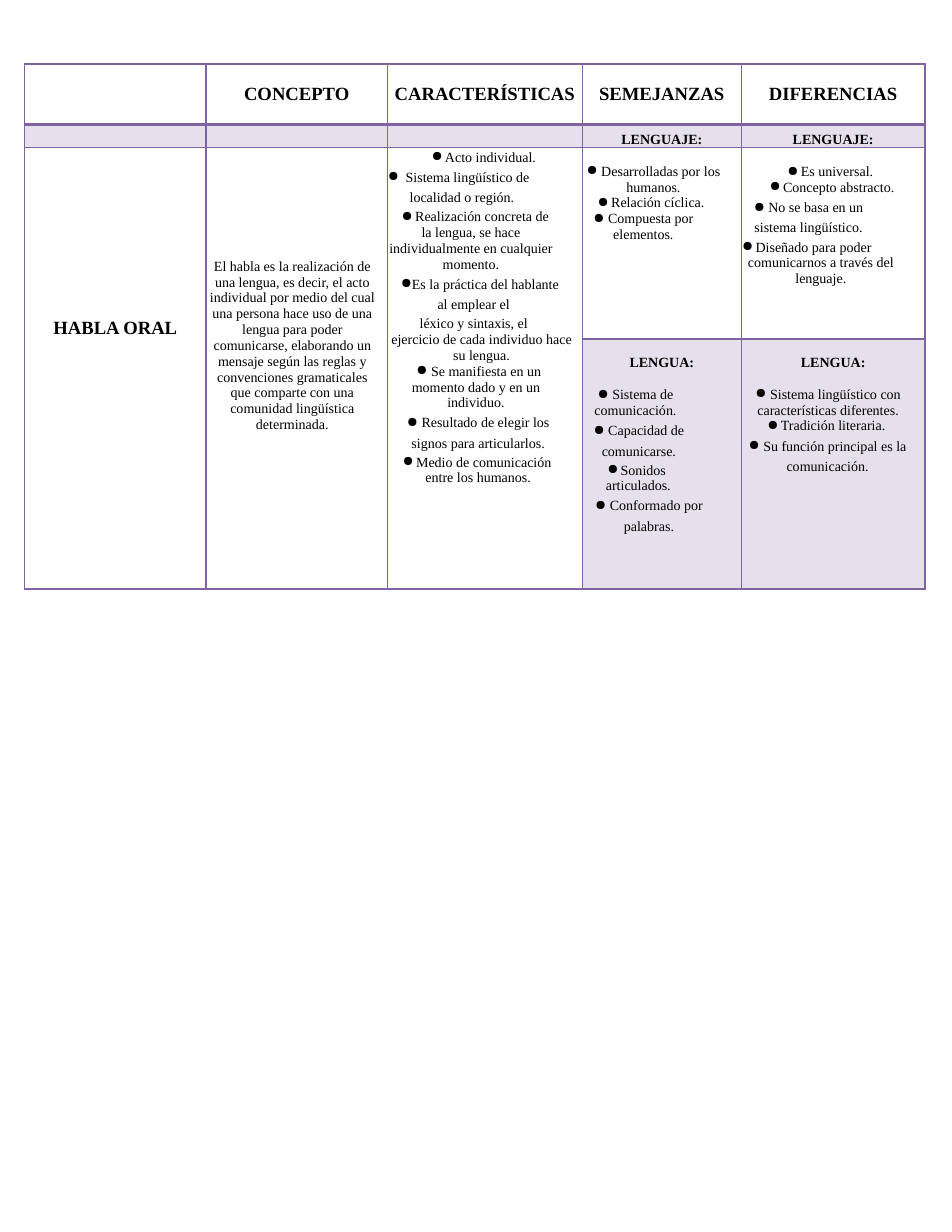
from lxml.etree import SubElement
from pptx import Presentation
from pptx.dml.color import RGBColor
from pptx.enum.text import PP_ALIGN as Align
from pptx.oxml.ns import qn
from pptx.util import Inches, Pt

PURPLE = "8064A2"
BLACK = "000000"


def rgb(hex_color):
    return RGBColor.from_string(hex_color)


def write(cell, entries, size=9, bold=False, top=0):
    """Fill a cell; an entry is (text, right margin, line spacing, indent, tab).

    An entry with a tab gets a bullet; a line spacing above 3 is in points.
    """
    cell.margin_top = Inches(top)
    frame = cell.text_frame
    for number, (text, right, line, indent, tab) in enumerate(entries):
        paragraph = frame.add_paragraph() if number else frame.paragraphs[0]
        props = paragraph._p.get_or_add_pPr()
        props.set("marL", "0")
        props.set("marR", str(Inches(right)))
        props.set("indent", str(Inches(indent)))
        if tab:
            SubElement(props, qn("a:buChar")).set("char", "●")
            stops = SubElement(props, qn("a:tabLst"))
            stop = SubElement(stops, qn("a:tab"))
            stop.set("pos", str(Inches(tab)))
            stop.set("algn", "l")
        paragraph.alignment = Align.CENTER
        paragraph.line_spacing = Pt(line) if line > 3 else line
        run = paragraph.add_run()
        run.text = text
        run.font.name = "Times New Roman"
        run.font.size = Pt(size)
        run.font.bold = bold or text == "LENGUA:"
        run.font.color.rgb = rgb(BLACK)


prs = Presentation()
prs.slide_width, prs.slide_height = Inches(8.5), Inches(11)
slide = prs.slides.add_slide(prs.slide_layouts[6])

# Table grid
column_widths = [1.62, 1.62, 1.74, 1.42, 1.64]
row_heights = [0.54, 0.2, 1.71, 2.23]
table = slide.shapes.add_table(4, 5, Inches(0.22), Inches(0.57), Inches(8.04), Inches(4.68)).table
for column, width in zip(table.columns, column_widths):
    column.width = Inches(width)
for row, height in zip(table.rows, row_heights):
    row.height = Inches(height)

# Borders, margins and fills
shaded = [(1, column) for column in range(5)] + [(3, 3), (3, 4)]
for r in range(4):
    for c in range(5):
        cell = table.cell(r, c)
        cell.margin_left = cell.margin_right = cell.margin_top = cell.margin_bottom = 0
        cell_props = cell._tc.get_or_add_tcPr()
        for side in ("L", "R", "T", "B"):
            heavy = (r, side) in [(0, "B"), (1, "T")]
            border = SubElement(cell_props, qn(f"a:ln{side}"))
            border.set("w", str(Pt(2 if heavy else 1)))
            border_fill = SubElement(border, qn("a:solidFill"))
            SubElement(border_fill, qn("a:srgbClr")).set("val", PURPLE)
        if (r, c) in shaded:
            cell.fill.solid()
            cell.fill.fore_color.rgb = rgb(PURPLE)
            tint = cell_props.find(qn("a:solidFill")).find(qn("a:srgbClr"))
            SubElement(tint, qn("a:alpha")).set("val", "20000")
        else:
            cell.fill.background()

# Cells that span the two lower rows
for c in range(3):
    table.cell(2, c).merge(table.cell(3, c))

# Small type in the empty cells keeps their rows low
for r, c in [(0, 0), (1, 0), (1, 1), (1, 2), (3, 0), (3, 1), (3, 2)]:
    end_props = SubElement(table.cell(r, c).text_frame.paragraphs[0]._p, qn("a:endParaRPr"))
    end_props.set("sz", "900")

# Headings
headings = ["CONCEPTO", "CARACTERÍSTICAS", "SEMEJANZAS", "DIFERENCIAS"]
for c, heading in enumerate(headings, 1):
    write(table.cell(0, c), [(heading, 0, 1, 0, None)], size=12, bold=True, top=0.18)
for c in (3, 4):
    write(table.cell(1, c), [("LENGUAJE:", 0, 1.5, 0, None)], bold=True)

# Topic and concept
write(table.cell(2, 0), [("HABLA ORAL", 0, 1, 0, None)], size=12, bold=True, top=1.52)
concept = (
    "El habla es la realización de una lengua, es decir, el acto individual por medio del cual "
    "una persona hace uso de una lengua para poder comunicarse, elaborando un mensaje según las "
    "reglas y convenciones gramaticales que comparte con una comunidad lingüística determinada."
)
write(table.cell(2, 1), [(concept, 0.08, 1.02, 0, None)], top=0.99)

# Characteristics
write(table.cell(2, 2), [
    ("Acto individual.", 0, 11.2, -0.12, 0.47),
    ("Sistema lingüístico de localidad o región.", 0.41, 13, -0.16, 0.29),
    ("Realización concreta de", 0.15, 12.3, -0.12, 0.23),
    ("la lengua, se hace individualmente en cualquier momento.", 0.25, 1.02, 0, None),
    ("Es la práctica del hablante al emplear el", 0.2, 13, 0.11, 0.44),
    ("léxico y sintaxis, el", 0.2, 12.3, 0, None),
    ("ejercicio de cada individuo hace su lengua.", 0.06, 1.02, 0, None),
    (" Se manifiesta en un momento dado y en un", 0.16, 1.02, 0.05, 0.35),
    ("individuo.", 0.16, 1, 0, None),
    (" Resultado de elegir los signos para articularlos.", 0.12, 13, -0.03, 0.26),
    ("Medio de comunicación", 0.12, 12.3, -0.12, 0.22),
    ("entre los humanos.", 0.12, 1, 0, None),
])

# Similarities and differences: language
write(table.cell(2, 3), [
    (" Desarrolladas por los humanos.", 0.15, 1.03, 0, 0.2),
    ("Relación cíclica.", 0.17, 1, -0.12, 0.2),
    (" Compuesta por elementos.", 0.33, 1.02, 0, 0.16),
], top=0.14)
write(table.cell(2, 4), [
    ("Es universal.", 0.03, 1, -0.12, 0.2),
    ("Concepto abstracto.", 0, 1, -0.12, 0.2),
    (" No se basa en un sistema lingüístico.", 0.44, 13, 0, 0.16),
    ("Diseñado para poder", 0.45, 12.3, -0.12, 0.2),
    ("comunicarnos a través del lenguaje.", 0.22, 1.02, 0, None),
], top=0.15)

# Similarities and differences: tongue
tongue = ("LENGUA:", 0, 1, 0, None)
write(table.cell(3, 3), [
    tongue,
    (" Sistema de comunicación.", 0.47, 1.03, 0, 0.2),
    (" Capacidad de comunicarse.", 0.41, 13, 0, 0.2),
    ("Sonidos", 0.43, 12.3, -0.12, 0.2),
    ("articulados.", 0.42, 1, 0, None),
    (" Conformado por palabras.", 0.23, 13, 0, 0.2),
], top=0.14)
write(table.cell(3, 4), [
    tongue,
    (" Sistema lingüístico con características diferentes.", 0.09, 1.02, 0, 0.2),
    ("Tradición literaria.", 0.1, 1, -0.12, 0.2),
    (" Su función principal es la comunicación.", 0.1, 13, 0, 0.2),
], top=0.14)
for c in (3, 4):
    table.cell(3, c).text_frame.paragraphs[1].space_before = Pt(10.5)

prs.save("out.pptx")
